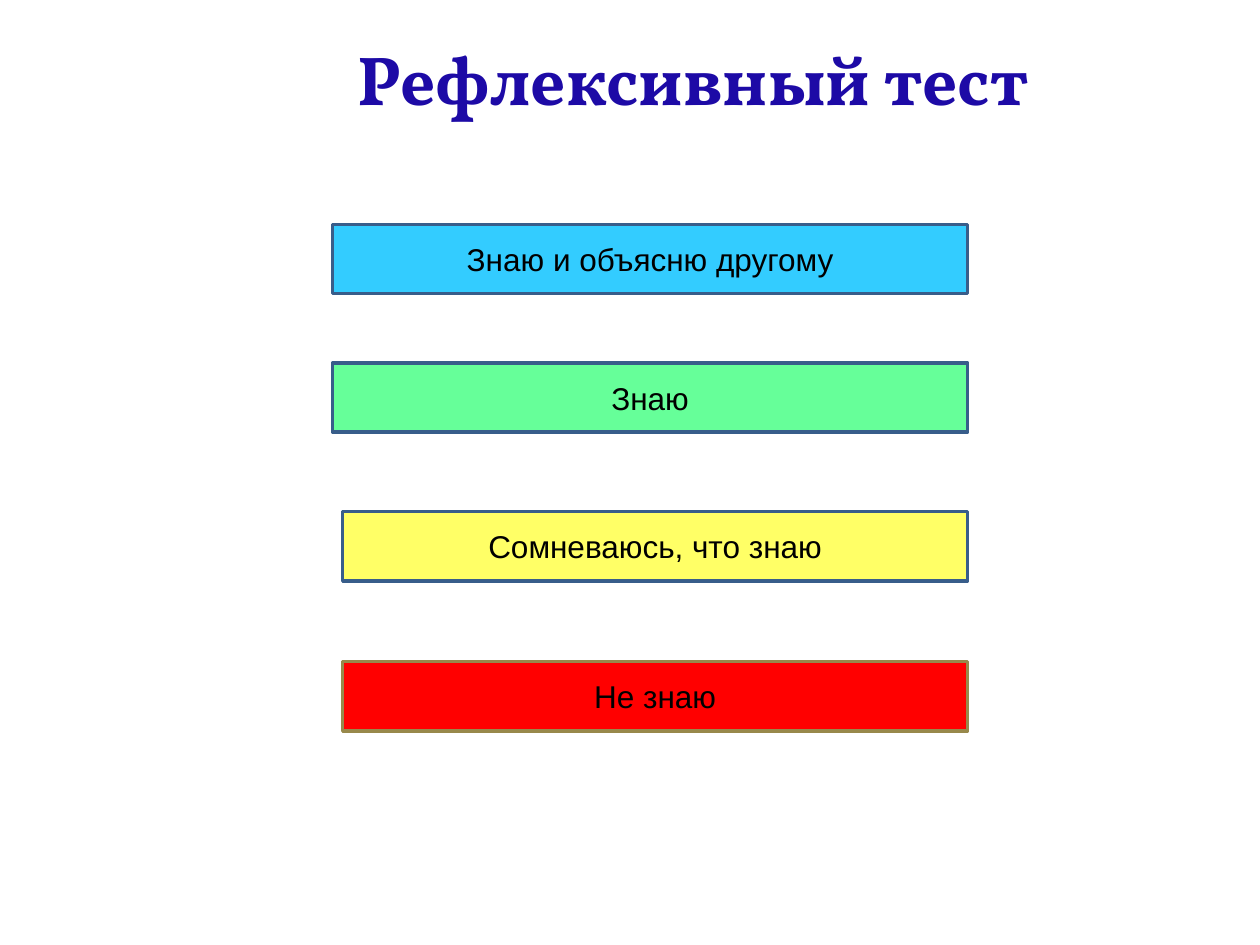
from pptx import Presentation
from pptx.dml.color import RGBColor
from pptx.enum.shapes import MSO_SHAPE
from pptx.enum.text import MSO_ANCHOR, MSO_AUTO_SIZE, PP_ALIGN
from pptx.util import Inches, Pt

COLORS = {
    "title": "1D0AA6",
    "text": "000000",
    "blue": "33CCFF",
    "green": "66FF99",
    "yellow": "FFFF66",
    "red": "FF0000",
    "navy line": "385D8A",
    "olive line": "98894B",
}
TITLE_FORMAT = {"name": "Vollkorn", "size": Pt(39.6), "bold": True}
ANSWER_FORMAT = {"name": "Arial", "size": Pt(18), "bold": False}
BARS_RIGHT = 7.68
BAR_HEIGHT = 0.55

# text, left, top, fill, line
ANSWERS = [
    ("Знаю и объясню другому", 2.64, 1.78, "blue", "navy line"),
    ("Знаю", 2.64, 2.88, "green", "navy line"),
    ("Сомневаюсь, что знаю", 2.72, 4.06, "yellow", "navy line"),
    ("Не знаю", 2.72, 5.25, "red", "olive line"),
]


def color(name):
    return RGBColor.from_string(COLORS[name])


def write_centred(frame, text, font_format, color_name):
    frame.word_wrap = True
    para = frame.paragraphs[0]
    para.alignment = PP_ALIGN.CENTER
    span = para.add_run()
    span.text = text
    for key, value in font_format.items():
        setattr(span.font, key, value)
    span.font.color.rgb = color(color_name)


def add_title(page, text):
    title = page.shapes.title
    title.left, title.top = Inches(1), Inches(0.29)
    title.width, title.height = Inches(9), Inches(1.25)
    frame = title.text_frame
    frame.auto_size = MSO_AUTO_SIZE.NONE
    frame.vertical_anchor = MSO_ANCHOR.TOP
    frame.margin_top = 0
    write_centred(frame, text, TITLE_FORMAT, "title")


def add_answer(page, text, left, top, fill, line):
    bar = page.shapes.add_shape(
        MSO_SHAPE.RECTANGLE, Inches(left), Inches(top),
        Inches(BARS_RIGHT - left), Inches(BAR_HEIGHT))
    bar.shadow.inherit = False
    bar.fill.solid()
    bar.fill.fore_color.rgb = color(fill)
    bar.line.color.rgb = color(line)
    bar.line.width = Pt(2)
    bar.text_frame.vertical_anchor = MSO_ANCHOR.MIDDLE
    write_centred(bar.text_frame, text, ANSWER_FORMAT, "text")


def main():
    deck = Presentation()
    deck.slide_width, deck.slide_height = Inches(10), Inches(7.5)
    page = deck.slides.add_slide(deck.slide_layouts[5])
    add_title(page, "Рефлексивный тест")
    for answer in ANSWERS:
        add_answer(page, *answer)
    deck.save("out.pptx")


if __name__ == "__main__":
    main()
